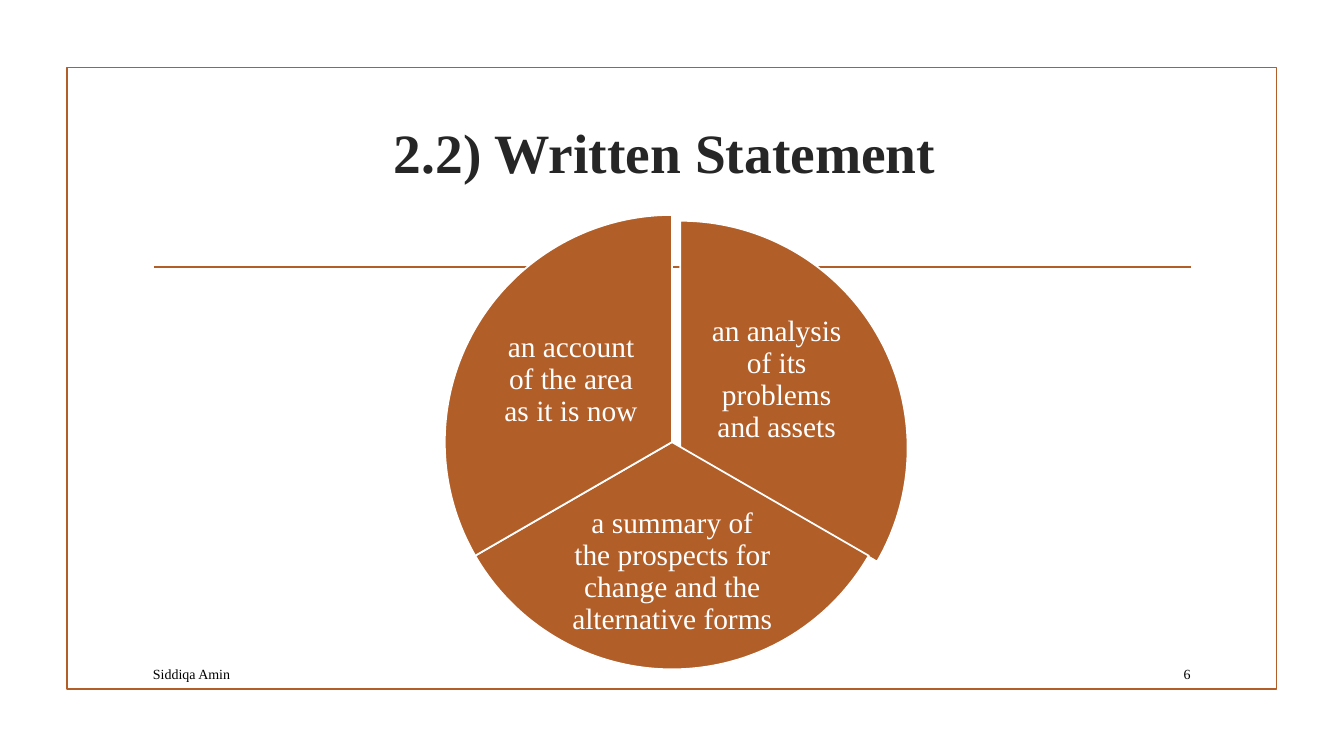
from dataclasses import dataclass

import pptx
import pptx.dml.color
import pptx.enum.shapes
import pptx.enum.text
import pptx.oxml.ns
import pptx.slide
import pptx.util
from lxml import etree

Pt = pptx.util.Pt
Color = pptx.dml.color.RGBColor
Align = pptx.enum.text.PP_ALIGN
Preset = pptx.enum.shapes.MSO_SHAPE


@dataclass(frozen=True)
class Theme:
    font: str = "Times New Roman"
    accent: Color = Color(0xB1, 0x5E, 0x28)
    title: Color = Color(0x26, 0x26, 0x26)
    light: Color = Color(0xFF, 0xFF, 0xFF)
    dark: Color = Color(0x00, 0x00, 0x00)
    title_size: float = 39.6
    wedge_size: float = 21
    footer_size: float = 10
    line_width: float = 1.25


@dataclass(frozen=True)
class Rect:
    left: float
    top: float
    width: float
    height: float

    def lengths(self) -> tuple[Pt, Pt, Pt, Pt]:
        return Pt(self.left), Pt(self.top), Pt(self.width), Pt(self.height)


@dataclass(frozen=True)
class Label:
    text: str
    rect: Rect
    size: float
    color: Color
    align: Align = Align.CENTER
    bold: bool = False
    line_spacing: float = 1.0
    margins: tuple[float, float, float, float] = (7.2, 3.6, 7.2, 3.6)


@dataclass(frozen=True)
class Wedge:
    text: str
    text_rect: Rect
    start_degrees: int
    center: tuple[float, float]


THEME = Theme()
PIE_DIAMETER = 324.6
PIE_CENTER = (480, 315.8)
PULLED_CENTER = (486, 320)
WEDGE_SWEEP = 120
DEGREES_TO_ADJUSTMENT = 0.6  # python-pptx divides the 1/60000 degree units by 100000

WEDGES = [
    Wedge("an analysis of its problems and assets",
          Rect(499.7, 217.4, 110.2, 108), 270, PULLED_CENTER),
    Wedge("a summary of the prospects for change and the alternative forms",
          Rect(406.8, 358.6, 146.9, 100), 30, PIE_CENTER),
    Wedge("an account of the area as it is now",
          Rect(352.8, 217.4, 110.2, 108), 150, PIE_CENTER),
]
LABELS = [
    Label("2.2) Written Statement", Rect(102.2, 77, 756, 103), THEME.title_size,
          THEME.title, bold=True, margins=(7.2, 3.6, 18, 45)),
    Label("Siddiqa Amin", Rect(102.2, 470.2, 575.3, 22.3), THEME.footer_size,
          THEME.dark, Align.LEFT),
    Label("6", Rect(815, 470.2, 42.5, 22.3), THEME.footer_size, THEME.dark, Align.RIGHT),
]


def add_label(slide: pptx.slide.Slide, label: Label) -> None:
    frame = slide.shapes.add_textbox(*label.rect.lengths()).text_frame
    frame.word_wrap = True
    frame.vertical_anchor = pptx.enum.text.MSO_ANCHOR.MIDDLE
    (frame.margin_left, frame.margin_top,
     frame.margin_right, frame.margin_bottom) = map(Pt, label.margins)
    para = frame.paragraphs[0]
    para.alignment = label.align
    para.line_spacing = label.line_spacing
    span = para.add_run()
    span.text = label.text
    span.font.name = THEME.font
    span.font.size = Pt(label.size)
    span.font.bold = label.bold
    span.font.color.rgb = label.color


def add_wedge(slide: pptx.slide.Slide, wedge: Wedge) -> None:
    center_x, center_y = wedge.center
    rect = Rect(center_x - PIE_DIAMETER / 2, center_y - PIE_DIAMETER / 2,
                PIE_DIAMETER, PIE_DIAMETER)
    shape = slide.shapes.add_shape(Preset.PIE, *rect.lengths())
    end_degrees = (wedge.start_degrees + WEDGE_SWEEP) % 360
    shape.adjustments[0] = wedge.start_degrees * DEGREES_TO_ADJUSTMENT
    shape.adjustments[1] = end_degrees * DEGREES_TO_ADJUSTMENT
    shape.shadow.inherit = False
    shape.fill.solid()
    shape.fill.fore_color.rgb = THEME.accent
    shape.line.color.rgb = THEME.light
    shape.line.width = Pt(THEME.line_width)
    add_label(slide, Label(wedge.text, wedge.text_rect, THEME.wedge_size, THEME.light,
                           line_spacing=0.9, margins=(2, 2, 2, 2)))


def add_frame_and_rule(slide: pptx.slide.Slide) -> None:
    border = slide.shapes.add_shape(Preset.RECTANGLE, *Rect(47.8, 48.2, 864, 444).lengths())
    border.shadow.inherit = False
    border.fill.background()
    rule = slide.shapes.add_connector(pptx.enum.shapes.MSO_CONNECTOR.STRAIGHT,
                                      Pt(110), Pt(190.8), Pt(850.5), Pt(190.8))
    etree.SubElement(rule._element.spPr, pptx.oxml.ns.qn("a:effectLst"))
    for outline in (border.line, rule.line):
        outline.color.rgb = THEME.accent
        outline.width = Pt(THEME.line_width)


def main() -> None:
    deck = pptx.Presentation()
    deck.slide_width, deck.slide_height = Pt(960), Pt(540)
    page = deck.slides.add_slide(deck.slide_layouts[6])
    add_frame_and_rule(page)
    for wedge in WEDGES:
        add_wedge(page, wedge)
    for label in LABELS:
        add_label(page, label)
    deck.save("out.pptx")


if __name__ == "__main__":
    main()
